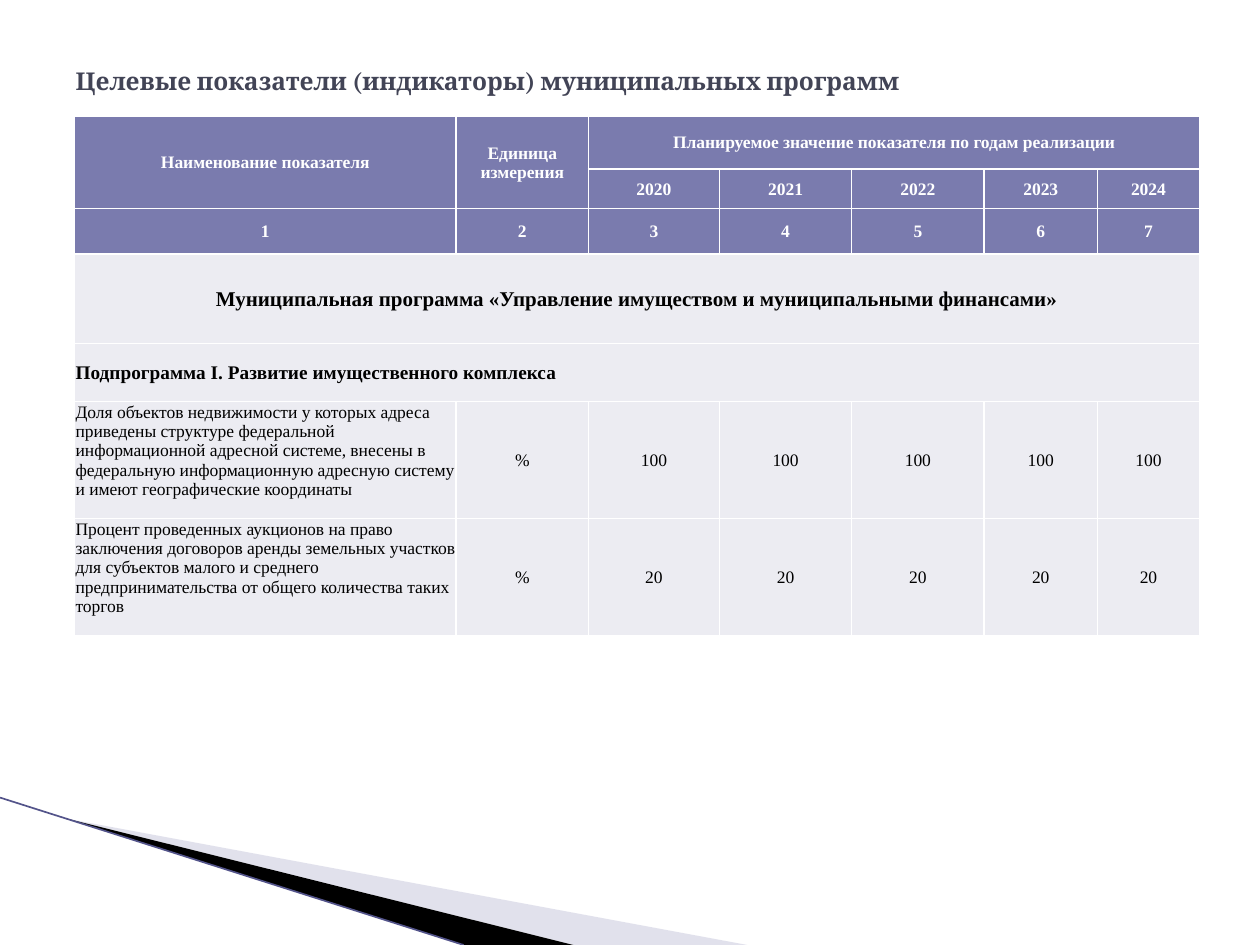
from lxml import etree
from pptx import Presentation
from pptx.dml.color import RGBColor
from pptx.enum.shapes import MSO_CONNECTOR
from pptx.enum.text import MSO_ANCHOR, PP_ALIGN
from pptx.oxml.ns import qn
from pptx.util import Inches, Pt

LEFT, CENTER = PP_ALIGN.LEFT, PP_ALIGN.CENTER
TOP, MIDDLE = MSO_ANCHOR.TOP, MSO_ANCHOR.MIDDLE
STRAIGHT = MSO_CONNECTOR.STRAIGHT

WHITE = RGBColor(0xFF, 0xFF, 0xFF)
BLACK = RGBColor(0, 0, 0)
SLATE = RGBColor(0x42, 0x44, 0x56)
HEADER = RGBColor(0x7A, 0x7B, 0xAE)
BODY = RGBColor(0xEC, 0xEC, 0xF2)
LILAC = RGBColor(0xB6, 0xB6, 0xD1)
INDIGO = RGBColor(0x53, 0x54, 0x8A)

WIDTH, HEIGHT = 10, 7.5
COLS = [3.03, 1.05, 1.04, 1.05, 1.05, 0.9, 0.81]
ROWS = [0.42, 0.31, 0.36, 0.71, 0.46, 0.93, 0.93]
HEADER_ROWS = 3
YEARS = [str(year) for year in range(2020, 2025)]
INDICATORS = [
    ("Доля объектов недвижимости у которых адреса приведены структуре "
     "федеральной информационной адресной системе, внесены в федеральную "
     "информационную адресную систему и имеют географические координаты", "100"),
    ("Процент проведенных аукционов на право заключения договоров аренды "
     "земельных участков для субъектов малого и среднего предпринимательства "
     "от общего количества таких торгов", "20"),
]


def add_run(p, text, font, size, color, bold):
    """Add one formatted run to a paragraph."""
    r = p.add_run()
    r.text = text
    r.font.name, r.font.size, r.font.bold = font, Pt(size), bold
    r.font.color.rgb = color


def add_title(s, box, text):
    """Place and format the title placeholder in the box."""
    sp = s.shapes.title
    sp.left, sp.top, sp.width, sp.height = [Inches(v) for v in box]
    tf = sp.text_frame
    tf.word_wrap, tf.vertical_anchor = True, MIDDLE
    p = tf.paragraphs[0]
    p.alignment = LEFT
    add_run(p, text, "Cambria", 14, SLATE, True)


def format_cell(cell, color):
    """Give a cell its margins, white borders and fill."""
    cell.margin_left = cell.margin_right = cell.margin_top = Inches(0.01)
    cell.margin_bottom = 0
    tcPr = cell._tc.get_or_add_tcPr()
    for side in ("a:lnL", "a:lnR", "a:lnT", "a:lnB"):
        ln = etree.SubElement(tcPr, qn(side), w=str(Pt(1)))
        fill = etree.SubElement(ln, qn("a:solidFill"))
        etree.SubElement(fill, qn("a:srgbClr"), val=str(WHITE))
    cell.fill.solid()
    cell.fill.fore_color.rgb = color


def write_cell(cell, text, size=10, color=BLACK, bold=False,
               align=CENTER, anchor=MIDDLE):
    """Write one formatted line of text into a cell."""
    cell.vertical_anchor = anchor
    p = cell.text_frame.paragraphs[0]
    p.alignment = align
    add_run(p, text, "Times New Roman", size, color, bold)


def add_indicator_table(s, left, top):
    """Build the table of indicators with its top left corner as given."""
    frame = s.shapes.add_table(len(ROWS), len(COLS), Inches(left), Inches(top),
                               Inches(sum(COLS)), Inches(sum(ROWS)))
    table = frame.table
    table.first_row = table.horz_banding = False
    for column, width in zip(table.columns, COLS):
        column.width = Inches(width)
    for i, (row, height) in enumerate(zip(table.rows, ROWS)):
        row.height = Inches(height)
        for cell in row.cells:
            format_cell(cell, HEADER if i < HEADER_ROWS else BODY)

    last = len(COLS) - 1
    for r1, c1, r2, c2 in [(0, 0, 1, 0), (0, 1, 1, 1), (0, 2, 0, last),
                           (3, 0, 3, last), (4, 0, 4, last)]:
        table.cell(r1, c1).merge(table.cell(r2, c2))

    heads = {(0, 0): "Наименование показателя", (0, 1): "Единица измерения",
             (0, 2): "Планируемое значение показателя по годам реализации"}
    heads.update({(1, c): year for c, year in enumerate(YEARS, 2)})
    heads.update({(2, c): str(c + 1) for c in range(len(COLS))})
    for (r, c), text in heads.items():
        write_cell(table.cell(r, c), text, color=WHITE, bold=True)

    write_cell(table.cell(3, 0), "Муниципальная программа «Управление "
               "имуществом и муниципальными финансами»", 12, bold=True)
    write_cell(table.cell(4, 0), "Подпрограмма I. Развитие имущественного "
               "комплекса", 11, bold=True, align=LEFT)
    for r, (name, value) in enumerate(INDICATORS, 5):
        write_cell(table.cell(r, 0), name, align=LEFT, anchor=TOP)
        for c, text in enumerate(["%"] + [value] * len(YEARS), 1):
            write_cell(table.cell(r, c), text)


def add_wedge(s, points, color, alpha=100):
    """Draw one filled wedge through the points."""
    start, *rest = [(Inches(x), Inches(y)) for x, y in points]
    builder = s.shapes.build_freeform(*start)
    builder.add_line_segments(rest, close=True)
    sp = builder.convert_to_shape()
    sp.shadow.inherit = False
    sp.fill.solid()
    sp.fill.fore_color.rgb = color
    sp.line.fill.background()
    if alpha < 100:
        clr = sp._element.spPr.find(qn("a:solidFill"))[0]
        etree.SubElement(clr, qn("a:alpha"), val=str(alpha * 1000))


def add_corner(s, left, top, bottom):
    """Draw the wedges and the edge line of the lower left corner."""
    tip = (left + 0.54, top + 0.17)
    add_wedge(s, [tip, (left + 5.93, bottom), (left + 4.55, bottom)], LILAC, 40)
    add_wedge(s, [tip, (left + 4.55, bottom), (left + 3.68, bottom)], BLACK)
    line = s.shapes.add_connector(STRAIGHT, Inches(left), Inches(top),
                                  Inches(left + 3.68), Inches(bottom))
    line.line.color.rgb, line.line.width = INDIGO, Pt(0.95)
    etree.SubElement(line._element.spPr, qn("a:effectLst"))


def main():
    """Build the slide and save it."""
    prs = Presentation()
    prs.slide_width, prs.slide_height = Inches(WIDTH), Inches(HEIGHT)
    s = prs.slides.add_slide(prs.slide_layouts[5])
    add_corner(s, 0, 6.33, HEIGHT)
    add_title(s, (0.05 * WIDTH, 0.04 * HEIGHT, 0.9 * WIDTH, 0.09 * HEIGHT),
              "Целевые показатели (индикаторы) муниципальных программ")
    add_indicator_table(s, 0.59, 0.92)
    prs.save("out.pptx")


if __name__ == "__main__":
    main()
